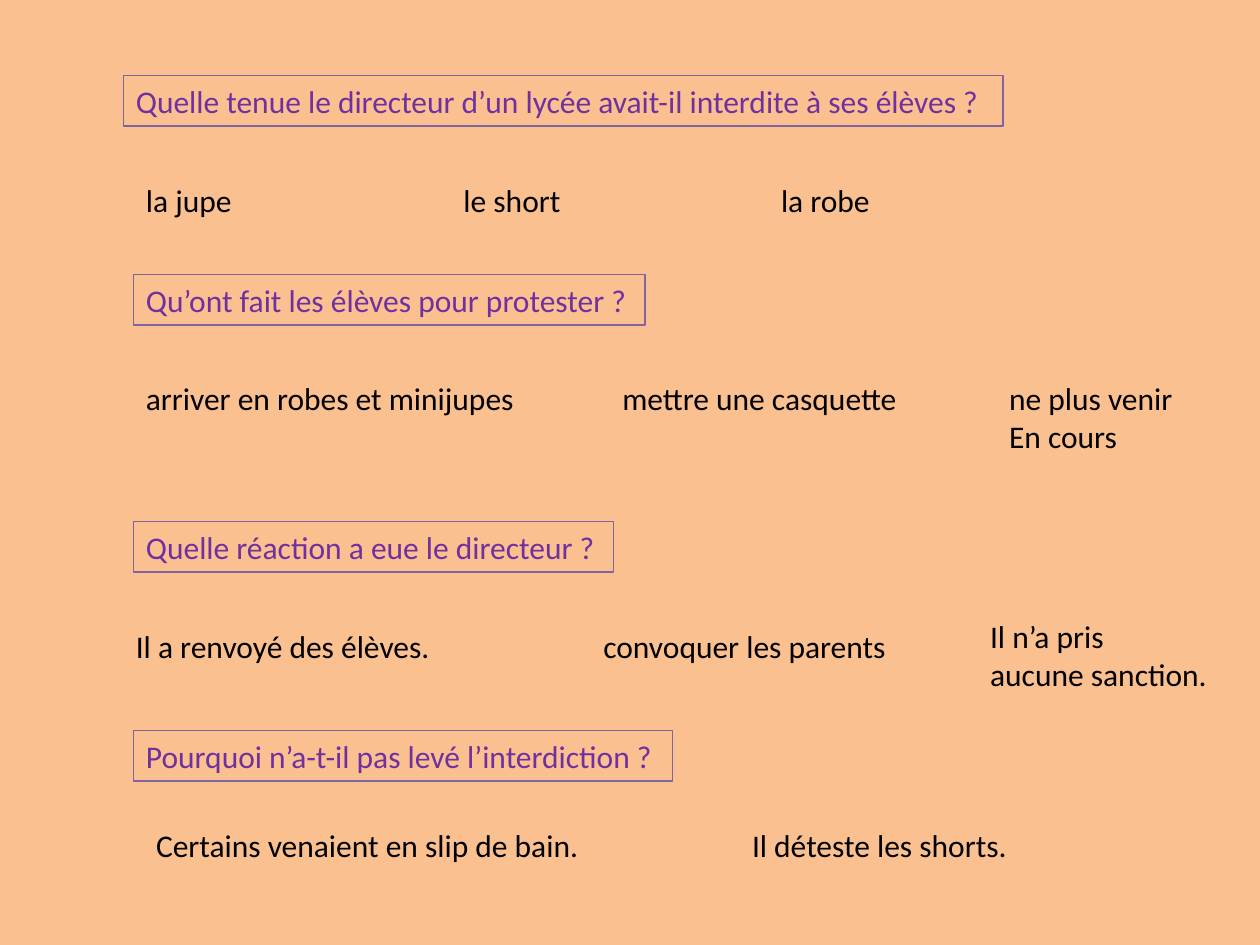
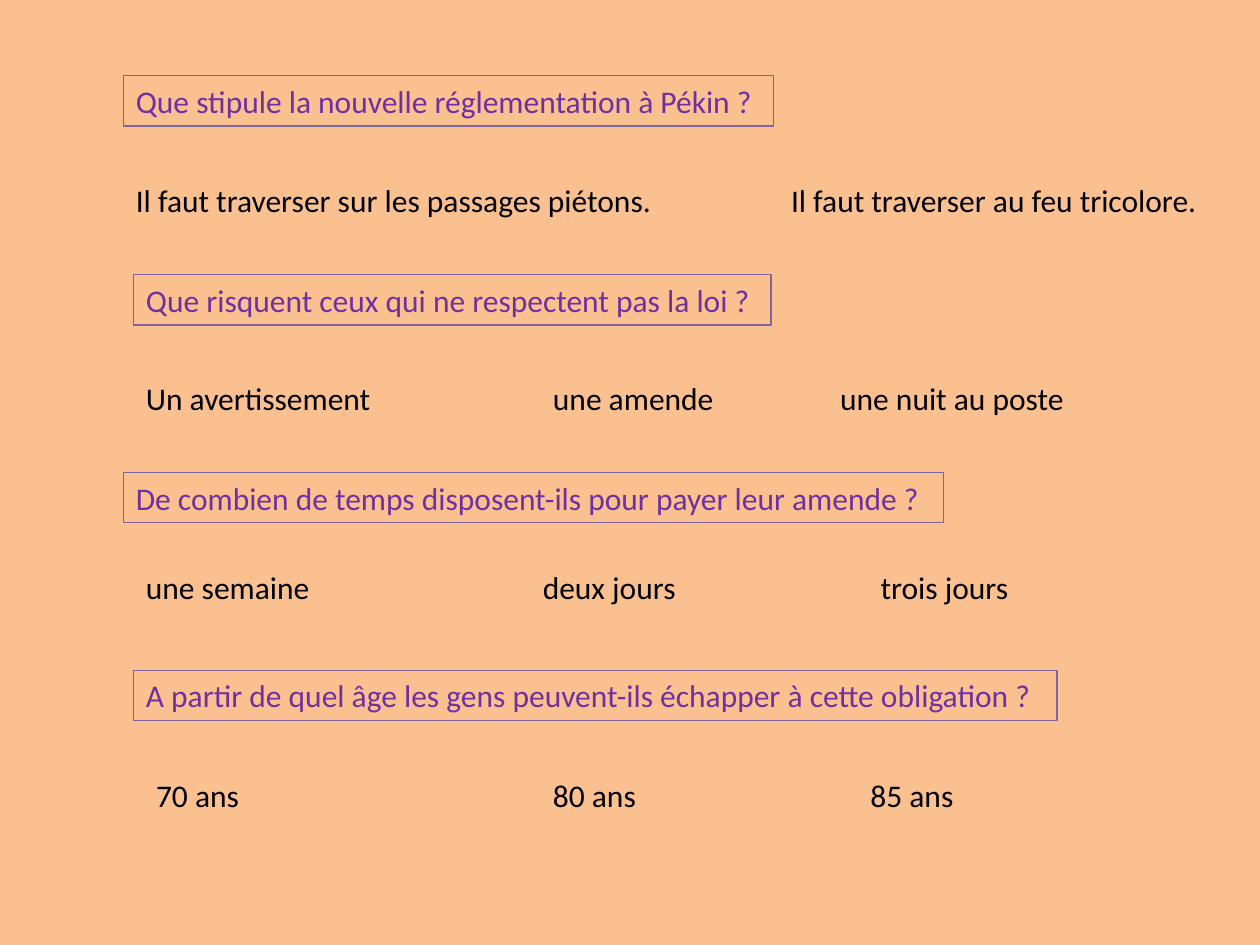
from pptx import Presentation
from pptx.dml.color import RGBColor
from pptx.enum.shapes import MSO_SHAPE as Shape
from pptx.enum.text import MSO_ANCHOR as Anchor, MSO_AUTO_SIZE as Auto, PP_ALIGN as Align
from pptx.util import Inches, Pt

PEACH, FRAME, PURPLE, BLACK = "FAC090", "8064A2", "7030A0", "000000"
FONT, SIZE = "Calibri", 18
ROW, LINE = 0.4, 0.31

# Each block: question, left, top, width, drop to answers,
# answers as (text, offset from question, width, lift)
PROTEST = [
    ("Quelle tenue le directeur d’un lycée avait-il interdite à ses élèves ?",
     0.98, 0.6, 6.98, 0.79,
     [("la jupe", 0.08, 0.89, 0), ("le short", 2.6, 0.98, 0), ("la robe", 5.12, 0.91, 0)]),
    ("Qu’ont fait les élèves pour protester ?", 1.06, 2.18, 4.06, 0.78,
     [("arriver en robes et minijupes", 0, 3.16, 0),
      ("mettre une casquette", 3.78, 2.42, 0),
      ("ne plus venir\nEn cours", 6.85, 1.52, 0)]),
    ("Quelle réaction a eue le directeur ?", 1.06, 4.14, 3.81, 0.79,
     [("Il a renvoyé des élèves.", -0.08, 2.56, 0),
      ("convoquer les parents", 3.63, 2.47, 0),
      ("Il n’a pris\naucune sanction.", 6.7, 1.94, 0.08)]),
    ("Pourquoi n’a-t-il pas levé l’interdiction ?", 1.06, 5.8, 4.28, 0.71,
     [("Certains venaient en slip de bain.", 0.08, 3.6, 0),
      ("Il déteste les shorts.", 4.81, 2.25, 0)]),
]
BEIJING = [
    ("Que stipule la nouvelle réglementation à Pékin ?", 0.98, 0.6, 5.16, 0.79,
     [("Il faut traverser sur les passages piétons.", 0, 4.34, 0),
      ("Il faut traverser au feu tricolore.", 5.2, 3.46, 0)]),
    ("Que risquent ceux qui ne respectent pas la loi ?", 1.06, 2.18, 5.06, 0.78,
     [("Un avertissement", 0, 2, 0), ("une amende", 3.23, 1.49, 0),
      ("une nuit au poste", 5.51, 2, 0)]),
    ("De combien de temps disposent-ils pour payer leur amende ?",
     0.98, 3.75, 6.51, 0.71,
     [("une semaine", 0.08, 1.52, 0), ("deux jours", 3.23, 1.27, 0),
      ("trois jours", 5.91, 1.22, 0)]),
    ("A partir de quel âge les gens peuvent-ils échapper à cette obligation ?",
     1.06, 5.32, 7.33, 0.79,
     [("70 ans", 0.08, 0.87, 0), ("80 ans", 3.23, 0.87, 0), ("85 ans", 5.75, 0.87, 0)]),
]


def rgb(code):
    """Turn a hex string into a colour."""
    return RGBColor.from_string(code)


def write(shape, text, color):
    """Write left-aligned lines, one paragraph each."""
    frame = shape.text_frame
    frame.word_wrap = False
    frame.auto_size = Auto.NONE
    frame.vertical_anchor = Anchor.TOP
    for i, line in enumerate(text.split("\n")):
        para = frame.add_paragraph() if i else frame.paragraphs[0]
        para.alignment = Align.LEFT
        run = para.add_run()
        run.text = line
        run.font.name, run.font.size = FONT, Pt(SIZE)
        run.font.color.rgb = rgb(color)


def add_query(slide, text, box):
    """Draw a framed question."""
    shape = slide.shapes.add_shape(Shape.RECTANGLE, *map(Inches, box))
    shape.shadow.inherit = False
    shape.fill.background()
    shape.line.color.rgb = rgb(FRAME)
    shape.line.width = Pt(0.75)
    write(shape, text, PURPLE)


def add_reply(slide, text, box):
    """Place one possible answer."""
    write(slide.shapes.add_textbox(*map(Inches, box)), text, BLACK)


def add_block(slide, query, left, top, width, drop, replies):
    """Place a question and its answers below it."""
    add_query(slide, query, (left, top, width, ROW))
    for text, shift, wide, lift in replies:
        high = ROW + LINE * text.count("\n")
        add_reply(slide, text, (left + shift, top + drop - lift, wide, high))


def add_quiz(deck, blocks):
    """Add a slide of question blocks."""
    slide = deck.slides.add_slide(deck.slide_layouts[6])
    fill = slide.background.fill
    fill.solid()
    fill.fore_color.rgb = rgb(PEACH)
    for block in blocks:
        add_block(slide, *block)


def main():
    """Build and save the quiz."""
    deck = Presentation()
    deck.slide_width, deck.slide_height = Inches(10), Inches(7.5)
    for blocks in (PROTEST, BEIJING):
        add_quiz(deck, blocks)
    deck.save("out.pptx")


if __name__ == "__main__":
    main()
